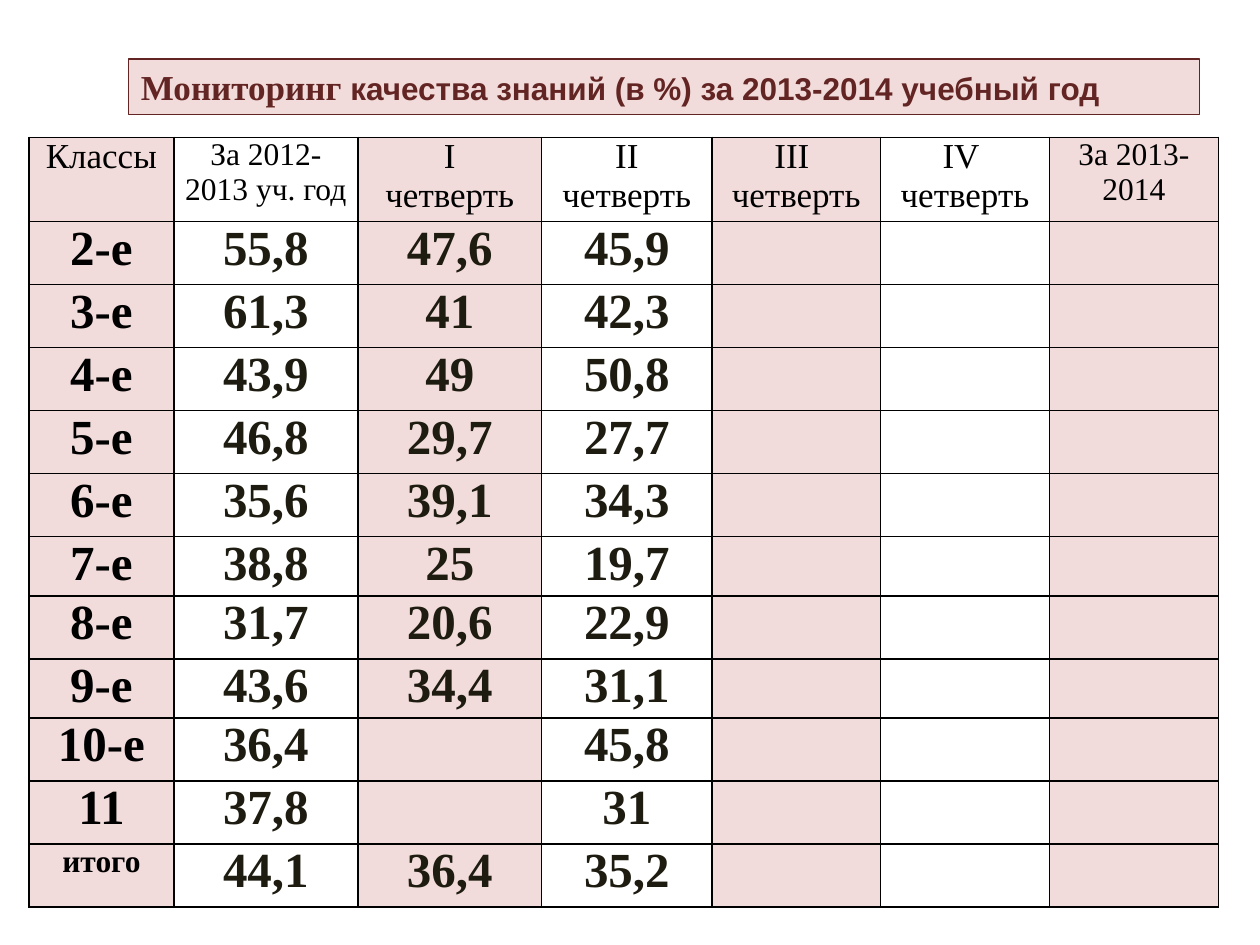
from dataclasses import dataclass

from lxml import etree
from pptx import Presentation
from pptx.dml.color import RGBColor
from pptx.enum.shapes import MSO_SHAPE
from pptx.enum.text import MSO_ANCHOR, MSO_AUTO_SIZE, PP_ALIGN
from pptx.oxml.ns import qn
from pptx.util import Inches, Pt

RECTANGLE = MSO_SHAPE.RECTANGLE
MIDDLE = MSO_ANCHOR.MIDDLE
GROW = MSO_AUTO_SIZE.SHAPE_TO_FIT_TEXT
CENTER, JUSTIFY = PP_ALIGN.CENTER, PP_ALIGN.JUSTIFY


@dataclass(frozen=True)
class Theme:
    serif: str = "Times New Roman"
    sans: str = "Arial"
    black: str = "000000"
    value: str = "1E1C11"
    wine: str = "632523"
    tint: str = "C0504D"
    tint_percent: int = 20
    banner: str = "F2DCDB"
    small: int = 18
    medium: int = 20
    large: int = 28
    border: float = 1
    outline: float = 1.5


THEME = Theme()


@dataclass(frozen=True)
class TextStyle:
    size: int
    color: str = THEME.black
    bold: bool = False
    font: str = THEME.serif
    outlined: bool = False


HEADING = TextStyle(THEME.medium, outlined=True)
YEAR_HEADING = TextStyle(THEME.small, outlined=True)
GRADE = TextStyle(THEME.large, bold=True, outlined=True)
TOTAL = TextStyle(THEME.small, bold=True, outlined=True)
VALUE = TextStyle(THEME.large, THEME.value, bold=True)
TITLE_LEAD = TextStyle(THEME.medium, THEME.wine, bold=True)
TITLE_REST = TextStyle(THEME.small, THEME.wine, bold=True, font=THEME.sans)

COLUMN_WIDTHS = [1.15, 1.46, 1.46, 1.35, 1.34, 1.34, 1.34]
HEADER_HEIGHT, ROW_HEIGHT, SHORT_ROW_HEIGHT = 0.67, 0.5, 0.47
SHORT_GRADES = {"7-е", "9-е"}
TOTAL_LABEL = "итого"

HEADINGS = [
    ("Классы", HEADING),
    ("За 2012-2013 уч. год", YEAR_HEADING),
    ("I\nчетверть", HEADING),
    ("II\nчетверть", HEADING),
    ("III \nчетверть", HEADING),
    ("IV \nчетверть", HEADING),
    ("За 2013-2014", YEAR_HEADING),
]
# Grade, previous year, first quarter, second quarter
RESULTS = [
    ("2-е", "55,8", "47,6", "45,9"),
    ("3-е", "61,3", "41", "42,3"),
    ("4-е", "43,9", "49", "50,8"),
    ("5-е", "46,8", "29,7", "27,7"),
    ("6-е", "35,6", "39,1", "34,3"),
    ("7-е", "38,8", "25", "19,7"),
    ("8-е", "31,7", "20,6", "22,9"),
    ("9-е", "43,6", "34,4", "31,1"),
    ("10-е", "36,4", "", "45,8"),
    ("11", "37,8", "", "31"),
    (TOTAL_LABEL, "44,1", "36,4", "35,2"),
]


def add_line(parent, tag: str, color: str, width: float):
    line = etree.SubElement(parent, qn(tag), w=str(Pt(width)))
    fill = etree.SubElement(line, qn("a:solidFill"))
    etree.SubElement(fill, qn("a:srgbClr"), val=color)
    return line


def add_run(paragraph, text: str, style: TextStyle) -> None:
    run = paragraph.add_run()
    run.text = text
    font = run.font
    font.name, font.size, font.bold = style.font, Pt(style.size), style.bold
    font.color.rgb = RGBColor.from_string(style.color)
    if style.outlined:
        properties = run._r.get_or_add_rPr()
        properties.insert(0, add_line(properties, "a:ln", THEME.wine, THEME.outline))


def format_cell(cell, tinted: bool) -> None:
    cell.margin_left = cell.margin_right = Inches(0.07)
    cell.margin_top = cell.margin_bottom = 0
    properties = cell._tc.get_or_add_tcPr()
    for side in "LRTB":
        add_line(properties, f"a:ln{side}", THEME.black, THEME.border)
    if not tinted:
        cell.fill.background()
        return
    cell.fill.solid()
    cell.fill.fore_color.rgb = RGBColor.from_string(THEME.tint)
    color = properties.find(qn("a:solidFill")).find(qn("a:srgbClr"))
    etree.SubElement(color, qn("a:alpha"), val=str(THEME.tint_percent * 1000))


def write_cell(cell, text: str, style: TextStyle) -> None:
    frame = cell.text_frame
    for index, line in enumerate(text.split("\n")):
        paragraph = frame.add_paragraph() if index else frame.paragraphs[0]
        paragraph.alignment = CENTER
        add_run(paragraph, line, style)


def add_results_table(slide) -> None:
    heights = [HEADER_HEIGHT] + [
        SHORT_ROW_HEIGHT if grade in SHORT_GRADES else ROW_HEIGHT
        for grade, *_ in RESULTS
    ]
    table = slide.shapes.add_table(
        len(heights), len(COLUMN_WIDTHS), Inches(0.23), Inches(1.09),
        Inches(sum(COLUMN_WIDTHS)), Inches(sum(heights)),
    ).table
    table.first_row = table.horz_banding = False
    for column, width in zip(table.columns, COLUMN_WIDTHS):
        column.width = Inches(width)
    for row, height in zip(table.rows, heights):
        row.height = Inches(height)
        for column_index, cell in enumerate(row.cells):
            format_cell(cell, tinted=column_index % 2 == 0)

    for column_index, (heading, style) in enumerate(HEADINGS):
        write_cell(table.cell(0, column_index), heading, style)
    for row_index, (grade, *values) in enumerate(RESULTS, start=1):
        grade_style = TOTAL if grade == TOTAL_LABEL else GRADE
        write_cell(table.cell(row_index, 0), grade, grade_style)
        for column_index, value in enumerate(values, start=1):
            if value:
                write_cell(table.cell(row_index, column_index), value, VALUE)


def add_title_banner(slide) -> None:
    banner = slide.shapes.add_shape(
        RECTANGLE, Inches(1.02), Inches(0.47), Inches(8.5), Inches(0.44))
    banner.shadow.inherit = False
    banner.fill.solid()
    banner.fill.fore_color.rgb = RGBColor.from_string(THEME.banner)
    banner.line.color.rgb = RGBColor.from_string(THEME.wine)
    banner.line.width = Pt(THEME.border)
    frame = banner.text_frame
    frame.word_wrap = True
    frame.auto_size = GROW
    frame.vertical_anchor = MIDDLE
    paragraph = frame.paragraphs[0]
    paragraph.alignment = JUSTIFY
    add_run(paragraph, "Мониторинг", TITLE_LEAD)
    add_run(paragraph, " качества знаний (в %) за 2013-2014 учебный год", TITLE_REST)


def main() -> None:
    presentation = Presentation()
    presentation.slide_width, presentation.slide_height = Inches(10), Inches(7.5)
    slide = presentation.slides.add_slide(presentation.slide_layouts[6])
    add_results_table(slide)
    add_title_banner(slide)
    presentation.save("out.pptx")


if __name__ == "__main__":
    main()
